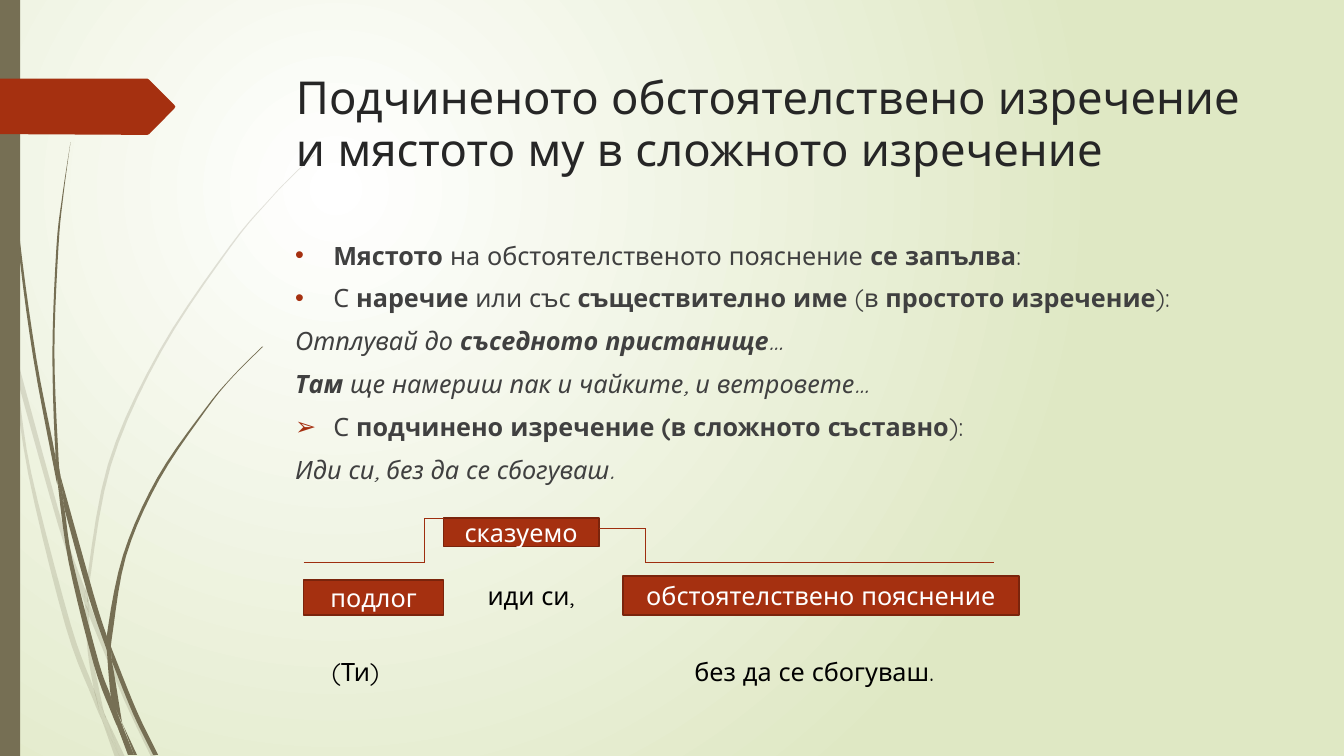
from itertools import pairwise

from lxml import etree
from pptx import Presentation
from pptx import util as u
from pptx.dml.color import RGBColor
from pptx.enum import shapes, text
from pptx.oxml.ns import qn

FONT = "Quicksand"
COLORS = {
    "white": "FFFFFF", "meadow": "DFE8C4", "stalk": "766F54", "rust": "A53010",
    "rim": "7A240C", "branch": "9E2E0F", "title": "262626", "body": "404040", "black": "000000",
}
TITLE = "Подчиненото обстоятелствено изречение и мястото му в сложното изречение"
# Each paragraph: bullet, then spans of (text, style letters: b bold, i italic)
BODY = [
    ("•", [("Мястото ", "b"), ("на обстоятелственото пояснение ", ""), ("се запълва", "b"), (":", "")]),
    ("•", [("С ", ""), ("наречие", "b"), (" или със ", ""), ("съществително име", "b"),
           (" (в ", ""), ("простото изречение", "b"), ("):", "")]),
    (None, [("Отплувай до ", "i"), ("съседното пристанище", "bi"), ("…", "i")]),
    (None, [("Там ", "bi"), ("ще намериш пак и чайките, и ветровете…", "i")]),
    ("➢", [("С ", ""), ("подчинено изречение (в сложното съставно", "b"), ("):", "")]),
    (None, [("Иди си, без да се сбогуваш.", "i")]),
]
# Grass blades: the two edges of each piece, in units of 2.54 cm from the box corner
PALE_GRASS = [
    ([(.11, 3.5), (.09, 3.22), (0, 2.82)], [(0, 2.99), (.1, 3.44), (.11, 3.5)]),
    ([(.14, 3.45), (.62, 5.2), (.85, 5.86)], [(.84, 5.99), (.58, 5.22), (.17, 3.76)]),
    ([(.88, 5.96), (.92, 6.07), (1.27, 6.92), (1.55, 7.51)], [(1.5, 7.51), (1.23, 6.94), (.88, 6.1)]),
    ([(1.05, 7.11), (1.24, 7.51)], [(1.19, 7.51), (1.05, 7.11)]),
    ([(.11, 3.5), (.17, 3.76), (.31, 4.69), (.7, 6.19), (.93, 6.83), (.99, 7.07)],
     [(1.01, 7.14), (.92, 6.93), (.65, 6.21), (.28, 4.7), (.11, 3.5)]),
    ([(.84, 5.99), (.88, 6.08), (.91, 6.46), (1.03, 7.06), (1.05, 7.11)],
     [(.96, 6.92), (.93, 6.83), (.87, 6.46), (.84, 5.99)]),
    ([(.88, 5.96), (.88, 5.84), (1.1, 4.62), (1.6, 3.49), (2.29, 2.45), (2.68, 1.98), (2.9, 1.75), (3.12, 1.54)],
     [(3.12, 1.53), (2.89, 1.75), (2.68, 1.97), (2.28, 2.44), (1.58, 3.48), (1.07, 4.61), (.85, 5.84), (.85, 5.86)]),
    ([(1.01, 7.14), (1.19, 7.51)], [(1.14, 7.51), (1.01, 7.14)]),
    ([(.85, 5.86), (.88, 5.96), (.88, 6.1)], [(.88, 6.08), (.84, 5.99)]),
    ([(.93, 6.83), (.96, 6.92), (1.05, 7.11), (1.19, 7.51)], [(1.01, 7.14), (.99, 7.07), (.93, 6.83)]),
]
DARK_GRASS = [
    ([(.04, 0), (.05, .48), (.08, 1.09), (.19, 2.32), (.36, 3.55), (.55, 4.53), (.57, 4.81)],
     [(.56, 4.77), (.33, 3.55), (.17, 2.33), (.07, 1.1), (.04, .48), (.03, 0)]),
    ([(.6, 4.72), (.93, 5.9), (1.06, 6.31)], [(1.06, 6.45), (.88, 5.92), (.64, 5.05)]),
    ([(1.1, 6.41), (1.13, 6.49), (1.36, 7.06), (1.57, 7.49)], [(1.52, 7.49), (1.32, 7.08), (1.11, 6.56)]),
    ([(.57, 4.77), (.64, 5.05), (.72, 5.56), (.98, 6.57), (1.1, 6.91), (1.16, 7.17)],
     [(1.17, 7.22), (1.11, 7.08), (.93, 6.59), (.68, 5.57), (.57, 4.77)]),
    ([(.6, 4.72), (.58, 4.53), (.54, 3.49), (.58, 2.45), (.63, 1.93), (.7, 1.41)],
     [(.7, 1.41), (.62, 1.93), (.56, 2.45), (.52, 3.49), (.55, 4.49), (.6, 4.72)]),
    ([(1.22, 7.19), (1.36, 7.49)], [(1.33, 7.49), (1.22, 7.19)]),
    ([(.55, 4.49), (.6, 4.72), (.64, 5.05)], [(.57, 4.77), (.55, 4.53)]),
    ([(1.11, 6.33), (1.25, 5.52), (1.58, 4.76), (2.05, 4.06), (2.31, 3.74), (2.61, 3.44)],
     [(2.6, 3.44), (2.31, 3.73), (2.04, 4.05), (1.56, 4.74), (1.22, 5.51), (1.06, 6.31), (1.1, 6.41)]),
    ([(1.17, 7.22), (1.31, 7.49)], [(1.27, 7.49), (1.17, 7.22)]),
    ([(1.06, 6.45), (1.11, 6.56), (1.21, 7.16), (1.22, 7.19)], [(1.16, 7.06), (1.1, 6.91), (1.06, 6.45)]),
    ([(1.06, 6.31), (1.1, 6.41), (1.11, 6.56)], [(1.06, 6.45), (1.06, 6.31)]),
    ([(1.1, 6.91), (1.16, 7.06), (1.33, 7.49)], [(1.3, 7.49), (1.17, 7.22), (1.1, 6.91)]),
]


def rgb(name):
    return RGBColor.from_string(COLORS[name])


def smooth(points, steps=5):
    """Rounds an edge off with a Catmull-Rom curve."""
    ends = [points[0], *points, points[-1]]
    curve = [points[0]]
    for a, b, c, d in zip(ends, ends[1:], ends[2:], ends[3:]):
        for step in range(1, steps + 1):
            t = step / steps
            curve.append(tuple(
                (2 * q + (r - p) * t + (2 * p - 5 * q + 4 * r - s) * t**2 + (3 * q - p - 3 * r + s) * t**3) / 2
                for p, q, r, s in zip(a, b, c, d)))
    return curve


def paint(shape, fill, line=None):
    shape.shadow.inherit = False
    shape.fill.solid()
    shape.fill.fore_color.rgb = rgb(fill)
    if line:
        shape.line.color.rgb = rgb(line)
        shape.line.width = u.Pt(1.25)
    else:
        shape.line.fill.background()
    return shape


def outline(parent, points, fill):
    spots = [(u.Cm(x), u.Cm(y)) for x, y in points]
    builder = parent.build_freeform(*spots[0])
    builder.add_line_segments(spots[1:], close=True)
    return paint(builder.convert_to_shape(), fill)


def add_span(para, words, size, color, style=""):
    span = para.add_run()
    span.text = words
    look = {"name": FONT, "size": u.Pt(size), "bold": "b" in style, "italic": "i" in style}
    for key, value in look.items():
        setattr(span.font, key, value)
    span.font.color.rgb = rgb(color)


def text_box(page, box):
    frame = page.shapes.add_textbox(*map(u.Cm, box)).text_frame
    frame.word_wrap = True
    return frame


def draw_background(page):
    fill = page.background.fill
    fill.gradient()
    for stop, name, place in zip(fill.gradient_stops, ("white", "meadow"), (0, 1)):
        stop.color.rgb, stop.position = rgb(name), place
    gradient = next(page.element.iter(qn("a:gradFill")))
    gradient.remove(gradient.find(qn("a:lin")))
    circle = etree.SubElement(gradient, qn("a:path"), {"path": "circle"})
    etree.SubElement(circle, qn("a:fillToRect"), {"l": "50000", "t": "50000", "r": "100000", "b": "100000"})


def draw_grass(page, box, blades, alpha=None):
    left, top = box[:2]
    group = page.shapes.add_group_shape()
    for edges in blades:
        points = [(left + 2.54 * x, top + 2.54 * y) for edge in edges for x, y in smooth(edge)]
        blade = outline(group.shapes, points, "stalk")
        if alpha:
            tint = next(blade.element.iter(qn("a:srgbClr")))
            etree.SubElement(tint, qn("a:alpha"), {"val": str(alpha * 1000)})


def draw_side(page, box):
    # Grass, side band and page marker
    left, top, width, height = box
    draw_grass(page, box, PALE_GRASS, alpha=20)
    draw_grass(page, box, DARK_GRASS)
    band = page.shapes.add_shape(shapes.MSO_SHAPE.RECTANGLE, *map(u.Cm, (left, top, .51, height)))
    paint(band, "stalk")
    marker = [(0, 1.98), (3.71, 1.98), (3.76, 2.01), (4.39, 2.64), (4.42, 2.69),
              (4.39, 2.74), (3.76, 3.38), (3.71, 3.4), (0, 3.38)]
    outline(page.shapes, [(left + x, top + y) for x, y in marker], "rust")


def draw_title(page, box):
    para = text_box(page, box).paragraphs[0]
    para.line_spacing = .95
    add_span(para, TITLE, 32.4, "title")


def draw_body(page, box):
    frame = text_box(page, box)
    for number, (bullet, spans) in enumerate(BODY):
        para = frame.add_paragraph() if number else frame.paragraphs[0]
        para.space_before = u.Pt(9 if number else 0)
        for words, style in spans:
            add_span(para, words, 18, "body", style)
        if bullet:
            props = para._p.get_or_add_pPr()
            props.set("marL", str(u.Cm(.96)))
            props.set("indent", str(-u.Cm(.96)))
            tint = etree.SubElement(props, qn("a:buClr"))
            etree.SubElement(tint, qn("a:srgbClr"), {"val": COLORS["rust"]})
            etree.SubElement(props, qn("a:buFont"), {"typeface": "Arial"})
            etree.SubElement(props, qn("a:buChar"), {"char": bullet})


def draw_diagram(page, box):
    left, top = box[:2]
    # Sentence parts
    parts = [("сказуемо", 3.53, 0, 3.91, .71), ("подлог", 0, 1.55, 3.53, .89),
             ("обстоятелствено пояснение", 8.05, 1.45, 9.98, .99)]
    for words, x, y, width, height in parts:
        place = map(u.Cm, (left + x, top + y, width, height))
        label = paint(page.shapes.add_shape(shapes.MSO_SHAPE.RECTANGLE, *place), "rust", "rim")
        label.text_frame.vertical_anchor = text.MSO_ANCHOR.MIDDLE
        label.text_frame.word_wrap = True
        para = label.text_frame.paragraphs[0]
        para.alignment = text.PP_ALIGN.CENTER
        add_span(para, words, 18, "white")
    # Words of the example
    for words, x, y, width in [("(Ти)", .46, 3.35, 2.34), ("иди си,", 4.39, 1.45, 3.07),
                               ("без да се сбогуваш.", 9.6, 3.35, 8.18)]:
        add_span(text_box(page, (left + x, top + y, width, 1.02)).paragraphs[0], words, 18, "black")
    # Stepped branches
    for branch in ([(0, 1.12), (3.05, 1.12), (3.05, 0), (3.53, 0)],
                   [(7.44, .25), (8.61, .25), (8.61, 1.12), (17.4, 1.12)]):
        for start, end in pairwise(branch):
            ends = [u.Cm(edge + shift) for spot in (start, end) for edge, shift in zip((left, top), spot)]
            line = page.shapes.add_connector(shapes.MSO_CONNECTOR.STRAIGHT, *ends)
            line.line.color.rgb = rgb("branch")
            line.line.width = u.Pt(.75)
            etree.SubElement(line.element.spPr, qn("a:effectLst"))


def main():
    deck = Presentation()
    deck.slide_width, deck.slide_height = u.Cm(33.87), u.Cm(19.05)
    page = deck.slides.add_slide(deck.slide_layouts[6])
    draw_background(page)
    draw_side(page, (0, 0, 7.93, 19.05))
    draw_title(page, (7.21, 1.73, 24.77, 3.56))
    draw_body(page, (7.19, 5.92, 24.77, 12.17))
    draw_diagram(page, (7.65, 13.06, 18.03, 4.37))
    deck.save("out.pptx")


if __name__ == "__main__":
    main()
